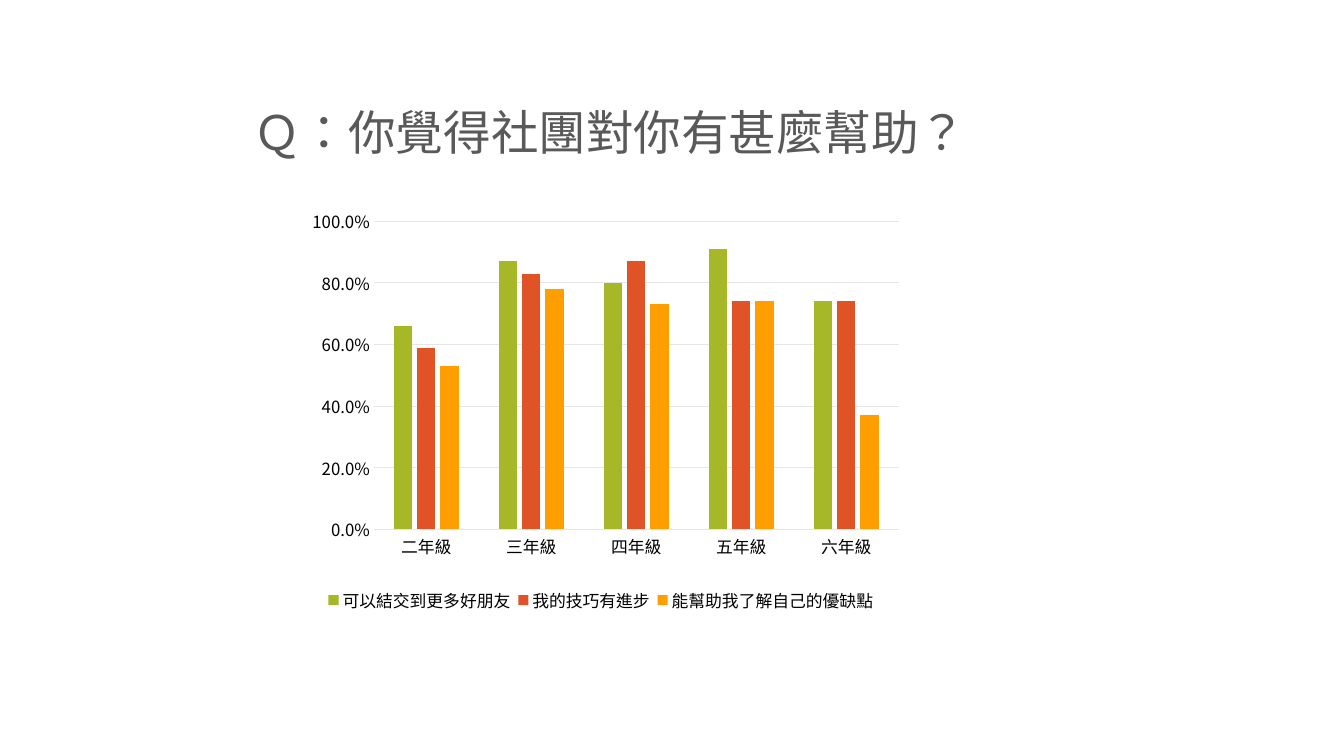
from dataclasses import dataclass

from lxml import etree
from pptx import Presentation
from pptx import util as u
from pptx.chart.data import CategoryChartData
from pptx.dml.color import RGBColor
from pptx.enum import chart as ch, lang, text
from pptx.oxml.ns import qn

SLIDE_W, SLIDE_H = 13.33, 7.5
FACE = "Noto Sans CJK SC"
BLACK, GREY, RULE = "000000", "595959", "E6E6E6"
GRADES = ["二年級", "三年級", "四年級", "五年級", "六年級"]


@dataclass
class Box:
    """A region given as shares of its container."""
    x: float
    y: float
    w: float
    h: float


@dataclass
class Benefit:
    name: str
    shares: list[float]
    color: str


TITLE_BOX = Box(0.181, 0.044, 0.769, 0.175)
CHART_BOX = Box(0.225, 0.22, 0.458, 0.7)
PLOT_BOX = Box(0.116, 0.104, 0.853, 0.582)
LEGEND_BOX = Box(0.03, 0.785, 0.91, 0.07)

BENEFITS = [
    Benefit("可以結交到更多好朋友", [0.66, 0.87, 0.8, 0.91, 0.74], "A6B727"),
    Benefit("我的技巧有進步", [0.59, 0.83, 0.87, 0.74, 0.74], "DF5327"),
    Benefit("能幫助我了解自己的優缺點", [0.53, 0.78, 0.73, 0.74, 0.37], "FE9E00"),
]


def rgb(color: str) -> RGBColor:
    return RGBColor.from_string(color)


def apply(target, formats: dict) -> None:
    for name, value in formats.items():
        setattr(target, name, value)


def on_slide(box: Box) -> list[int]:
    shares = zip((box.x, box.y, box.w, box.h), (SLIDE_W, SLIDE_H) * 2)
    return [u.Inches(share * size) for share, size in shares]


def style_font(font, size: float, color: str) -> None:
    apply(font, {"size": u.Pt(size), "name": FACE, "bold": False,
                 "language_id": lang.MSO_LANGUAGE_ID.TRADITIONAL_CHINESE})
    font.color.rgb = rgb(color)
    # East Asian face goes right after the Latin one
    latin = font._element.find(qn("a:latin"))
    east_asian = etree.Element(qn("a:ea"))
    east_asian.set("typeface", FACE)
    latin.addnext(east_asian)


def style_rule(line) -> None:
    line.color.rgb = rgb(RULE)
    line.width = u.Pt(0.75)


def place_inside(part, box: Box, position: int, inner: bool = False) -> None:
    """Give a chart part a fixed place inside the chart."""
    for old in part.findall(qn("c:layout")):
        part.remove(old)
    layout = etree.Element(qn("c:layout"))
    manual = etree.SubElement(layout, qn("c:manualLayout"))
    settings = {"layoutTarget": "inner"} if inner else {}
    settings |= {"xMode": "edge", "yMode": "edge",
                 "x": box.x, "y": box.y, "w": box.w, "h": box.h}
    for tag, value in settings.items():
        etree.SubElement(manual, qn(f"c:{tag}")).set("val", str(value))
    part.insert(position, layout)


def add_title(slide) -> None:
    title = slide.shapes.title
    apply(title, dict(zip(("left", "top", "width", "height"), on_slide(TITLE_BOX))))
    frame = title.text_frame
    apply(frame, {"text": "Ｑ：你覺得社團對你有甚麼幫助？", "word_wrap": True,
                  "vertical_anchor": text.MSO_ANCHOR.BOTTOM,
                  "auto_size": text.MSO_AUTO_SIZE.NONE})
    question = frame.paragraphs[0]
    apply(question, {"alignment": text.PP_ALIGN.LEFT, "line_spacing": 0.9})
    style_font(question.runs[0].font, 34, GREY)


def add_benefit_chart(slide) -> None:
    data = CategoryChartData(number_format="0.0%")
    data.categories = GRADES
    for benefit in BENEFITS:
        data.add_series(benefit.name, benefit.shares)
    chart = slide.shapes.add_chart(
        ch.XL_CHART_TYPE.COLUMN_CLUSTERED, *on_slide(CHART_BOX), data).chart
    apply(chart, {"has_title": False, "has_legend": True})
    style_font(chart.font, 12, BLACK)

    # Columns
    plot = chart.plots[0]
    apply(plot, {"gap_width": 219, "overlap": -27, "vary_by_categories": False})
    for columns, benefit in zip(plot.series, BENEFITS):
        columns.format.fill.solid()
        columns.format.fill.fore_color.rgb = rgb(benefit.color)
        columns.invert_if_negative = False

    # Axes
    grades, shares = chart.category_axis, chart.value_axis
    for axis in (grades, shares):
        apply(axis, {"major_tick_mark": ch.XL_TICK_MARK.NONE,
                     "minor_tick_mark": ch.XL_TICK_MARK.NONE})
        style_font(axis.tick_labels.font, 12, BLACK)
    style_rule(grades.format.line)
    apply(shares, {"minimum_scale": 0, "maximum_scale": 1, "major_unit": 0.2,
                   "has_major_gridlines": True})
    apply(shares.tick_labels, {"number_format": "0.0%",
                               "number_format_is_linked": False})
    shares.format.line.fill.background()
    style_rule(shares.major_gridlines.format.line)

    # Legend and plot placement
    legend = chart.legend
    apply(legend, {"position": ch.XL_LEGEND_POSITION.BOTTOM,
                   "include_in_layout": False})
    style_font(legend.font, 12, BLACK)
    place_inside(legend._element, LEGEND_BOX, 1)
    plot_area = chart._chartSpace.chart.plotArea
    place_inside(plot_area, PLOT_BOX, 0, inner=True)


def main() -> None:
    deck = Presentation()
    apply(deck, {"slide_width": u.Inches(SLIDE_W), "slide_height": u.Inches(SLIDE_H)})
    slide = deck.slides.add_slide(deck.slide_layouts.get_by_name("Title Only"))
    add_title(slide)
    add_benefit_chart(slide)
    deck.save("out.pptx")


if __name__ == "__main__":
    main()
